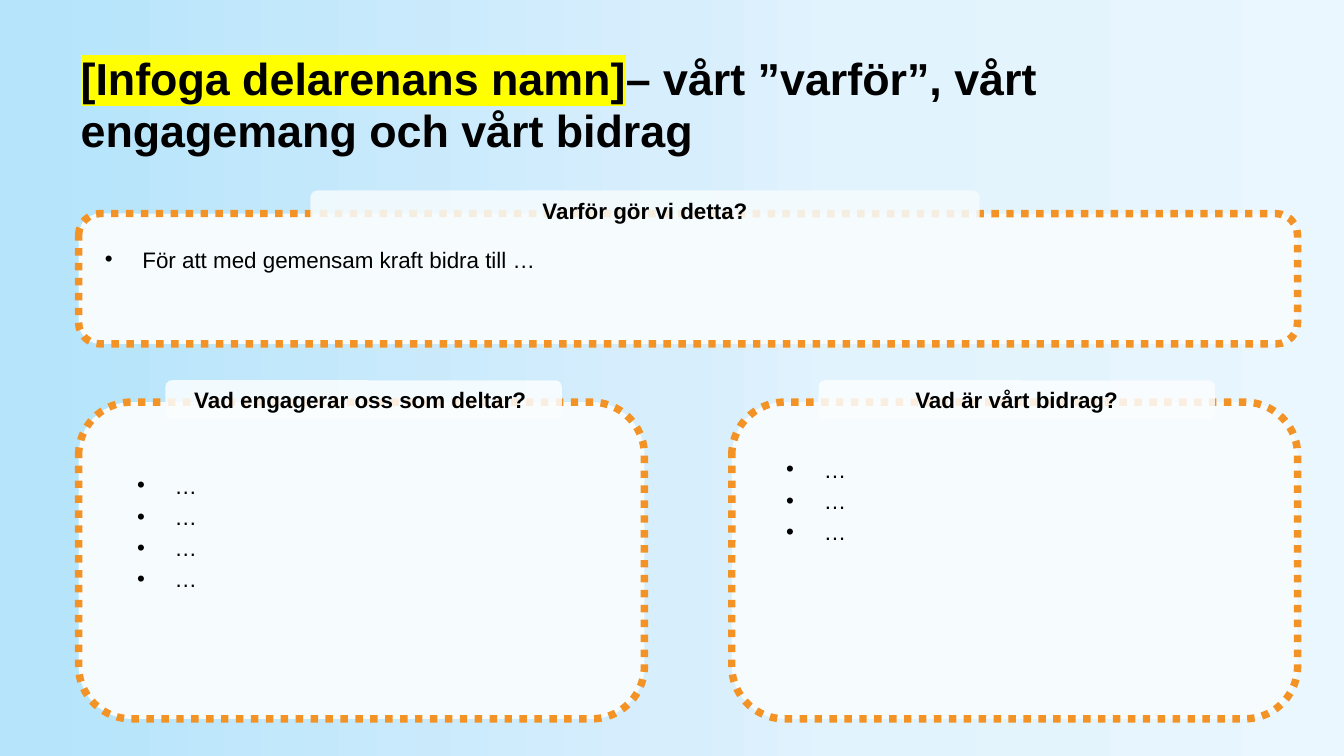
"""Build a slide with one wide and two half panels, each with a heading tab and a bullet list."""
from lxml import etree
from pptx import Presentation, util as u
from pptx.dml.color import RGBColor
from pptx.enum import dml, shapes, text
from pptx.oxml.ns import qn

deck = Presentation()
deck.slide_width = u.Inches(10)
deck.slide_height = deck.slide_width * 9 // 16
col, row = deck.slide_width / 100, deck.slide_height / 100
slide = deck.slides.add_slide(deck.slide_layouts[5])


def ink(fill, tone, alpha=100):
    fill.solid()
    fill.fore_color.rgb = RGBColor.from_string(tone)
    if alpha < 100:
        node = fill._xPr.find(qn("a:solidFill"))[0]
        etree.SubElement(node, qn("a:alpha"), val=str(alpha * 1000))


def write(para, words, size=12, bold=False, mark=None, bullet=False, align=None):
    if bullet:
        props = para._p.get_or_add_pPr()
        props.set("marL", str(u.Inches(0.28)))
        props.set("indent", str(-u.Inches(0.28)))
        etree.SubElement(props, qn("a:buFont"), typeface="Arial")
        etree.SubElement(props, qn("a:buChar"), char="•")
        para.space_after = u.Pt(2.3)
    para.alignment = align
    run = para.add_run()
    run.text = words
    run.font.name, run.font.size, run.font.bold = "Arial", u.Pt(size), bold
    ink(run.font.fill, "000000")
    if mark:
        light = etree.Element(qn("a:highlight"))
        etree.SubElement(light, qn("a:srgbClr"), val=mark)
        run.font.fill._xPr.find(qn("a:solidFill")).addnext(light)


back = slide.shapes.add_shape(
    shapes.MSO_SHAPE.RECTANGLE,
    *[int(n) for n in (-1.5 * col, -2.1 * row, 103.8 * col, 103.5 * row)])
back.shadow.inherit = False
ink(back.line.fill, "808080")
back.line.width = u.Pt(1)
back.fill.gradient()
back.fill.gradient_angle = 180
stops = back.fill._xPr.find(qn("a:gradFill")).find(qn("a:gsLst"))
stops.clear()
for spot, tone in ((0, "EAF7FE"), (38, "E1F3FD"), (50, "D7EEFC"),
                   (96, "B5E4FB"), (100, "B3E3FA")):
    stop = etree.SubElement(stops, qn("a:gs"), pos=str(spot * 1000))
    etree.SubElement(stop, qn("a:srgbClr"), val=tone)

title = slide.shapes.title
title.left, title.top, title.width, title.height = [
    int(n) for n in (5 * col, 11.3 * row, 90.8 * col, 10.4 * row)]
frame = title.text_frame
frame.word_wrap = True
frame.auto_size = text.MSO_AUTO_SIZE.NONE
frame.vertical_anchor = text.MSO_ANCHOR.BOTTOM
head = frame.paragraphs[0]
head.line_spacing = 0.95
left = text.PP_ALIGN.LEFT
write(head, "[Infoga delarenans namn]", size=24, bold=True, mark="FFFF00", align=left)
write(head, "– vårt ”varför”, vårt engagemang och vårt bidrag", size=24, bold=True, align=left)
slide.shapes._spTree.append(title._element)

panels = (
    ((5.85, 28.25, 90.7, 17.25), (23.1, 25.2, 49.8, 5.3), (7.5, 32.5, 87.7, 13),
     "F6FCFE", "Varför gör vi detta?", ["För att med gemensam kraft bidra till …"]),
    ((5.85, 53.2, 42.1, 41.9), (12.3, 50.3, 29.5, 5.2), (9.9, 62.4, 38.8, 34.5),
     "FBFEFF", "Vad engagerar oss som deltar? ", ["…"] * 4),
    ((54.45, 53.2, 42.1, 41.9), (60.9, 50.3, 29.5, 5.2), (58.2, 60.3, 38.8, 33.2),
     "FBFEFF", "Vad är vårt bidrag?", ["…"] * 3),
)
for *areas, tone, label, items in panels:
    edge, tab, body = [
        [int(n) for n in (x * col, y * row, w * col, h * row)] for x, y, w, h in areas]

    panel = slide.shapes.add_shape(shapes.MSO_SHAPE.ROUNDED_RECTANGLE, *edge)
    panel.shadow.inherit = False
    ink(panel.fill, "F6FBFE")
    ink(panel.line.fill, "F39325")
    panel.line.width = u.Pt(4)
    panel.line.dash_style = dml.MSO_LINE.ROUND_DOT

    strip = slide.shapes.add_shape(shapes.MSO_SHAPE.ROUNDED_RECTANGLE, *tab)
    strip.shadow.inherit = False
    ink(strip.fill, tone, alpha=86)
    strip.line.fill.background()
    strip.text_frame.vertical_anchor = text.MSO_ANCHOR.MIDDLE
    write(strip.text_frame.paragraphs[0], label, bold=True, align=text.PP_ALIGN.CENTER)

    frame = slide.shapes.add_textbox(*body).text_frame
    frame.word_wrap = True
    frame.margin_left = u.Inches(0.03)
    frame.margin_top = frame.margin_right = frame.margin_bottom = 0
    for i, item in enumerate(items):
        para = frame.add_paragraph() if i else frame.paragraphs[0]
        write(para, item, bullet=True)

deck.save("out.pptx")
